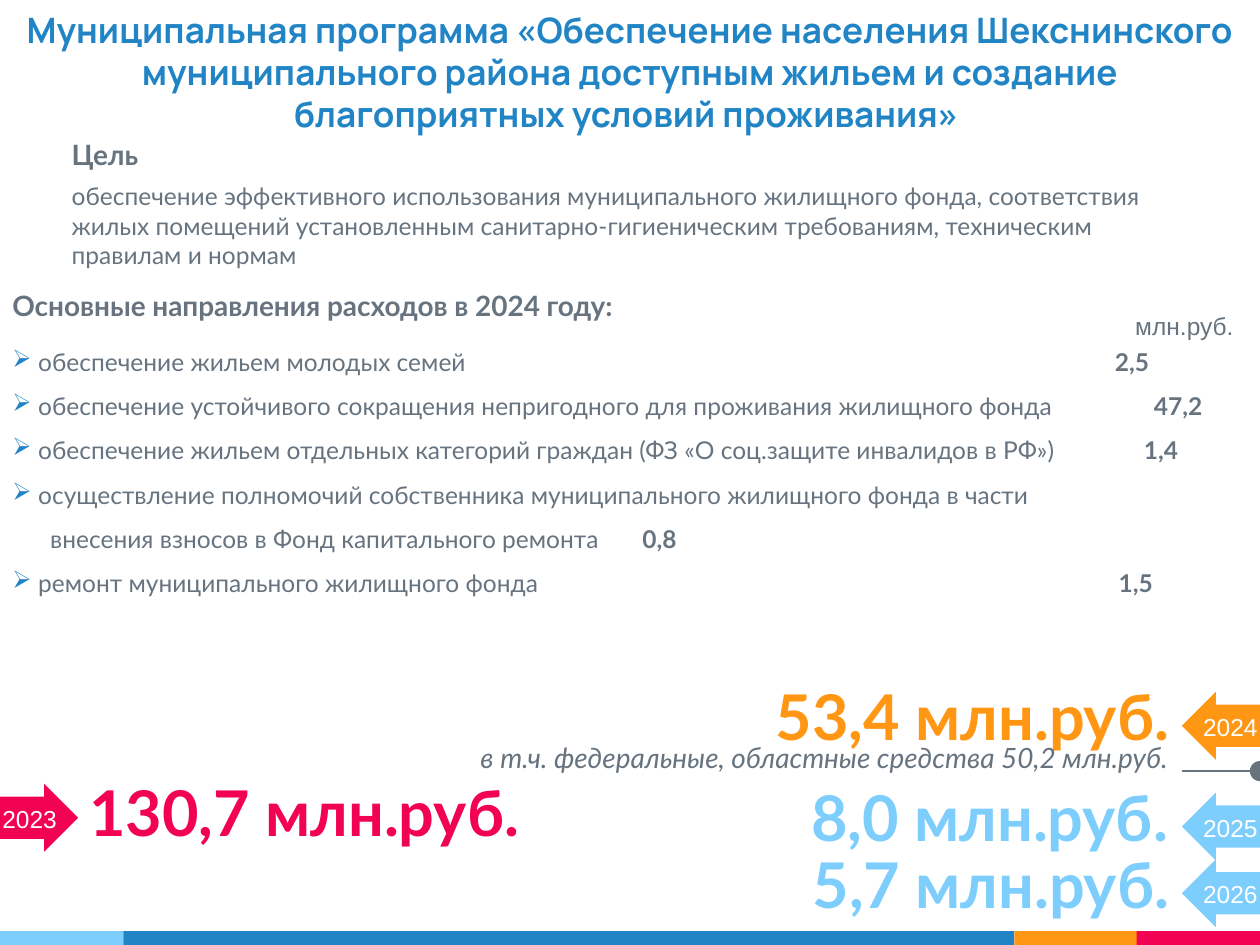
from dataclasses import dataclass

from lxml import etree
from pptx import Presentation
from pptx.dml.color import RGBColor
from pptx.enum.shapes import MSO_CONNECTOR, MSO_SHAPE
from pptx.enum.text import MSO_ANCHOR, MSO_AUTO_SIZE, PP_ALIGN
from pptx.oxml.ns import qn
from pptx.util import Inches, Pt

LEFT, CENTER, RIGHT = PP_ALIGN.LEFT, PP_ALIGN.CENTER, PP_ALIGN.RIGHT
TOP, BOTTOM = MSO_ANCHOR.TOP, MSO_ANCHOR.BOTTOM
RECTANGLE, ARROW, DOT = MSO_SHAPE.RECTANGLE, MSO_SHAPE.RIGHT_ARROW, MSO_SHAPE.FLOWCHART_CONNECTOR
COLORS = {
    "blue": "2185C5",
    "sky": "7ECEFD",
    "orange": "FF9715",
    "red": "F20253",
    "gray": "677480",
    "white": "FFFFFF",
}
ARROW_WIDTH, ARROW_HEIGHT = 0.62, 0.54


@dataclass
class Expense:
    label: str
    amount: str = ""
    tab: float = 0
    bullet: bool = True


@dataclass
class YearTotal:
    year: str
    amount: str
    color: str
    box: tuple[float, float, float, float]
    arrow_top: float
    past: bool = False


EXPENSES = [
    Expense("обеспечение жильем молодых семей", "2,5", 8.75),
    Expense("обеспечение устойчивого сокращения непригодного для проживания жилищного фонда", "47,2", 9.06),
    Expense("обеспечение жильем отдельных категорий граждан (ФЗ «О соц.защите инвалидов в РФ»)", "1,4", 8.98),
    Expense("осуществление полномочий собственника муниципального жилищного фонда в части"),
    Expense("внесения взносов в Фонд капитального ремонта", "0,8", 8.7, False),
    Expense("ремонт муниципального жилищного фонда", "1,5", 8.78),
]
TOTALS = [
    YearTotal("2023", "130,7 млн.руб.", "red", (0.61, 5.86, 3.77, 0.98), 6.22, True),
    YearTotal("2024", "53,4 млн.руб.", "orange", (5.55, 5.1, 3.83, 0.98), 5.49),
    YearTotal("2025", "8,0 млн.руб.", "sky", (5.78, 5.9, 3.59, 0.98), 6.29),
    YearTotal("2026", "5,7 млн.руб.", "sky", (5.63, 6.65, 3.75, 0.76), 6.82),
]
FOOTER_BARS = [("sky", 0, 0.98), ("blue", 0.98, 7.07), ("orange", 8.05, 0.98), ("red", 9.02, 0.98)]


def rgb(color: str) -> RGBColor:
    return RGBColor.from_string(COLORS[color])


def add_filled(slide, preset, color: str, left: float, top: float, width: float, height: float):
    shape = slide.shapes.add_shape(preset, Inches(left), Inches(top), Inches(width), Inches(height))
    shape.shadow.inherit = False
    shape.fill.solid()
    shape.fill.fore_color.rgb = rgb(color)
    shape.line.fill.background()
    return shape


def add_frame(slide, left: float, top: float, width: float, height: float,
              anchor=TOP, inset: float = 0.1, wrap: bool = True):
    box = slide.shapes.add_textbox(Inches(left), Inches(top), Inches(width), Inches(height))
    frame = box.text_frame
    frame.word_wrap = wrap
    frame.vertical_anchor = anchor
    frame.margin_top = frame.margin_bottom = Inches(inset)
    frame.margin_left = frame.margin_right = Inches(0.1)
    return frame


def style(paragraph, size: int, color: str, font: str = "Lato", bold: bool = False,
          italic: bool = False, align=LEFT, before: int = 0) -> None:
    paragraph.font.name = font
    paragraph.font.size = Pt(size)
    paragraph.font.color.rgb = rgb(color)
    paragraph.font.bold = bold
    paragraph.font.italic = italic
    paragraph.alignment = align
    paragraph.space_before = Pt(before)


def add_expense(frame, expense: Expense) -> None:
    paragraph = frame.add_paragraph()
    style(paragraph, 14, "gray")
    paragraph.line_spacing = 1.5
    properties = paragraph._p.get_or_add_pPr()
    properties.set("marL", "0")
    properties.set("indent", str(0 if expense.bullet else Inches(0.3)))
    extras = []
    if expense.bullet:
        color = etree.Element(qn("a:buClr"))
        etree.SubElement(color, qn("a:srgbClr"), val=COLORS["blue"])
        extras += [color, etree.Element(qn("a:buChar"), char="➢")]
    if expense.amount:
        tabs = etree.Element(qn("a:tabLst"))
        etree.SubElement(tabs, qn("a:tab"), pos=str(Inches(expense.tab)), algn="l")
        extras.append(tabs)
    for extra in extras:
        properties.find(qn("a:defRPr")).addprevious(extra)
    paragraph.add_run().text = (" " if expense.bullet else "") + expense.label
    if expense.amount:
        amount = paragraph.add_run()
        amount.text = "\t" + expense.amount
        amount.font.bold = True


def add_total(slide, total: YearTotal) -> None:
    align = LEFT if total.past else RIGHT
    amount = add_frame(slide, *total.box, anchor=BOTTOM).paragraphs[0]
    amount.text = total.amount
    style(amount, 36, total.color, bold=True, align=align)

    arrow_left = 0 if total.past else 10 - ARROW_WIDTH
    arrow = add_filled(slide, ARROW, total.color, arrow_left, total.arrow_top, ARROW_WIDTH, ARROW_HEIGHT)
    arrow.adjustments[0] = 0.62
    arrow.adjustments[1] = 0.5
    arrow.rotation = 0 if total.past else 180

    year_left = -0.08 if total.past else 9.44
    year = add_frame(slide, year_left, total.arrow_top + 0.11, 0.64, 0.34,
                     inset=0.05, wrap=False).paragraphs[0]
    year.text = total.year
    style(year, 14, "white", "Arial", align=align)


def add_title(slide) -> None:
    title = slide.shapes.title
    title.left, title.top, title.width, title.height = Inches(0), Inches(0), Inches(10), Inches(1.17)
    frame = title.text_frame
    frame.auto_size = MSO_AUTO_SIZE.NONE
    frame.vertical_anchor = BOTTOM
    frame.margin_left = frame.margin_right = frame.margin_top = frame.margin_bottom = Inches(0.1)
    heading = frame.paragraphs[0]
    heading.text = ("Муниципальная программа «Обеспечение населения Шекснинского муниципального района "
                    "доступным жильем и создание благоприятных условий проживания» ")
    style(heading, 20, "blue", "Manrope", bold=True, align=CENTER)
    heading.line_spacing = Pt(24)


def main() -> None:
    deck = Presentation()
    deck.slide_width, deck.slide_height = Inches(10), Inches(7.5)
    slide = deck.slides.add_slide(deck.slide_layouts[5])

    for color, left, width in FOOTER_BARS:
        add_filled(slide, RECTANGLE, color, left, 7.39, width, 0.11)
    add_title(slide)

    goal = add_frame(slide, 0.47, 0.99, 8.98, 1.11)
    goal.paragraphs[0].text = "Цель"
    style(goal.paragraphs[0], 16, "gray", bold=True, before=6)
    goal_text = goal.add_paragraph()
    goal_text.text = ("обеспечение эффективного использования муниципального жилищного фонда, "
                      "соответствия жилых помещений установленным санитарно-гигиеническим "
                      "требованиям, техническим правилам и нормам")
    style(goal_text, 14, "gray", before=6)

    spending = add_frame(slide, 0, 2.19, 9.86, 3.84)
    spending.paragraphs[0].text = "Основные направления расходов в 2024 году:"
    style(spending.paragraphs[0], 16, "gray", bold=True, before=6)
    spending.paragraphs[0].space_after = Pt(6)
    for expense in EXPENSES:
        add_expense(spending, expense)

    unit_frame = add_frame(slide, 8.75, 2.42, 1.25, 0.34, inset=0.05)
    unit_frame.margin_left = Inches(0.26)
    unit = unit_frame.paragraphs[0]
    unit.text = "млн.руб."
    style(unit, 14, "gray", "Arial")

    for total in TOTALS:
        add_total(slide, total)

    subsidy = add_frame(slide, 2.89, 5.78, 6.48, 0.51).paragraphs[0]
    subsidy.text = "в т.ч. федеральные, областные средства 50,2 млн.руб."
    style(subsidy, 16, "gray", italic=True, align=RIGHT, before=6)

    add_filled(slide, DOT, "gray", 9.92, 6.04, 0.16, 0.16)
    leader = slide.shapes.add_connector(MSO_CONNECTOR.STRAIGHT, Inches(10.01), Inches(6.12),
                                        Inches(9.38), Inches(6.12))
    leader.line.color.rgb = rgb("gray")
    leader.line.width = Pt(0.75)
    etree.SubElement(leader._element.spPr, qn("a:effectLst"))

    deck.save("out.pptx")


if __name__ == "__main__":
    main()
